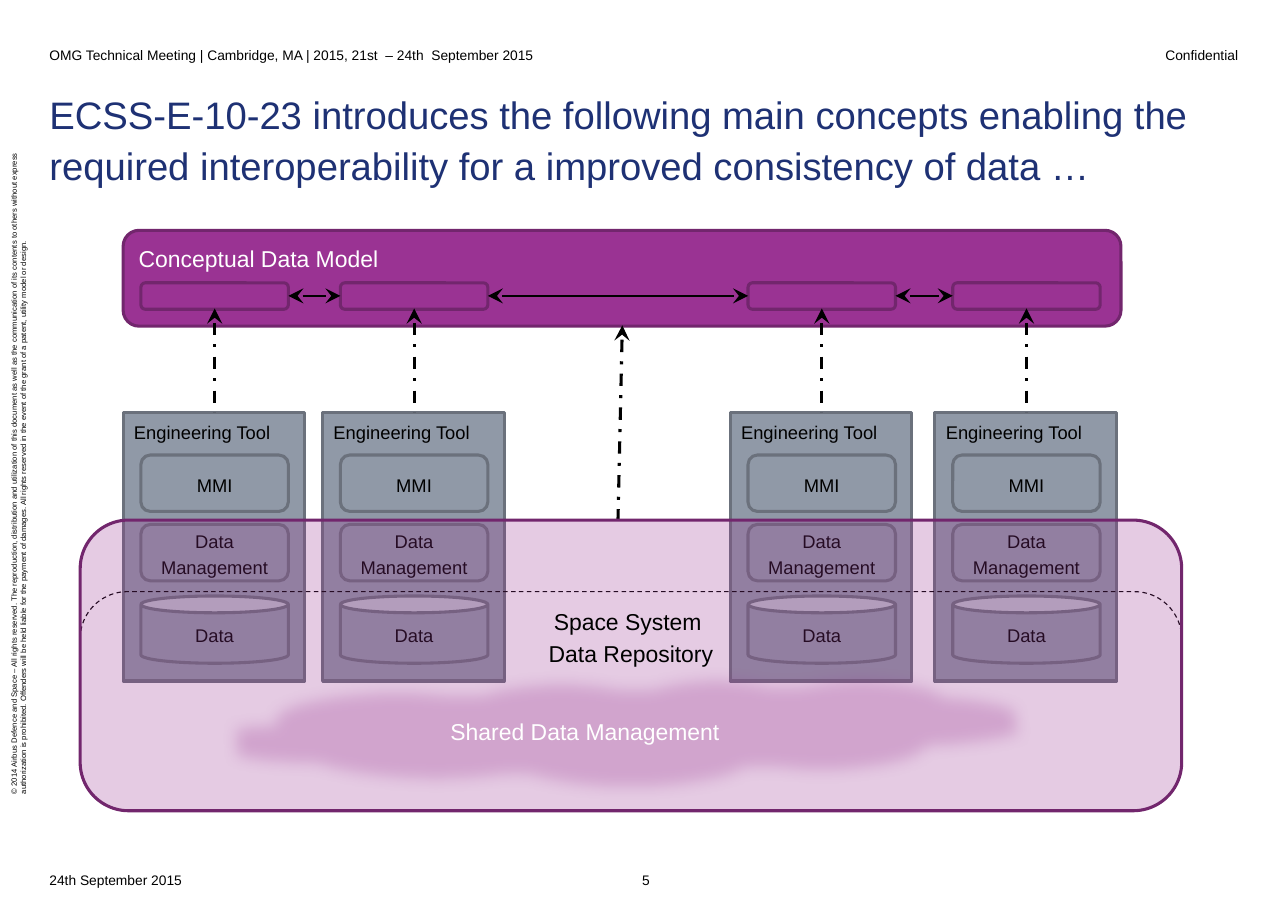
import pptx
import pptx.util
import pptx.dml.color
import pptx.enum.dml
import pptx.enum.shapes
import pptx.enum.text
import pptx.oxml.ns
from lxml import etree

Cm, Pt = pptx.util.Cm, pptx.util.Pt
RGB = pptx.dml.color.RGBColor
KIND = pptx.enum.shapes.MSO_SHAPE
DASH = pptx.enum.dml.MSO_LINE
ALIGN = pptx.enum.text.PP_ALIGN
ANCHOR = pptx.enum.text.MSO_ANCHOR
qn = pptx.oxml.ns.qn

BLACK = RGB(0x00, 0x00, 0x00)
WHITE = RGB(0xFF, 0xFF, 0xFF)
NAVY = RGB(0x1E, 0x31, 0x74)
GREY = RGB(0x90, 0x99, 0xA7)
SLATE = RGB(0x6B, 0x71, 0x7C)
PURPLE = RGB(0x9A, 0x33, 0x93)
PLUM = RGB(0x72, 0x26, 0x6D)

TOOLS = [2.84, 7.44, 16.84, 21.56]
TOP = 9.5
INDENT, INNER = 0.41, 3.4
PARTS = [
    (KIND.CAN, 13.74, 1.55, "Data"),
    (KIND.ROUNDED_RECTANGLE, 12.09, 1.3, "Data Management"),
    (KIND.ROUNDED_RECTANGLE, 10.49, 1.3, "MMI"),
]


def write(frame, text, size=12, color=BLACK, align=ALIGN.LEFT, anchor=ANCHOR.TOP,
          space=1.15, font="Arial"):
    frame.word_wrap = True
    frame.vertical_anchor = anchor
    frame.text = text
    for par in frame.paragraphs:
        par.alignment = align
        par.line_spacing = space
        par.font.name = font
        par.font.size = Pt(size)
        par.font.color.rgb = color


class Art:
    """Draws on one slide; lengths are in centimetres."""

    def __init__(self, slide):
        self.slide = slide
        self.home = slide.shapes

    def group(self):
        """Send the next shapes into a new group."""
        self.home = self.slide.shapes.add_group_shape().shapes

    def close(self):
        """Send the next shapes to the slide again."""
        self.home = self.slide.shapes

    def label(self, text, x, y, w, h, turn=0, space=1, **style):
        box = self.home.add_textbox(Cm(x), Cm(y), Cm(w), Cm(h))
        box.rotation = turn
        frame = box.text_frame
        frame.margin_left = frame.margin_right = 0
        frame.margin_top = frame.margin_bottom = 0
        write(frame, text, space=space, **style)

    def shape(self, kind, x, y, w, h, fill=None, edge=None, width=2, alpha=None):
        item = self.home.add_shape(kind, Cm(x), Cm(y), Cm(w), Cm(h))
        item.shadow.inherit = False
        if fill is None:
            item.fill.background()
        else:
            item.fill.solid()
            item.fill.fore_color.rgb = fill
        if alpha:
            tint = item.element.spPr.find(qn("a:solidFill")).find(qn("a:srgbClr"))
            etree.SubElement(tint, qn("a:alpha"), val=str(alpha * 1000))
        if edge is None:
            item.line.fill.background()
        else:
            item.line.color.rgb = edge
            item.line.width = Pt(width)
        return item

    def arrow(self, x1, y1, x2, y2, width=1, dash=None, ends=("headEnd", "tailEnd")):
        link = self.home.add_connector(
            pptx.enum.shapes.MSO_CONNECTOR.STRAIGHT, Cm(x1), Cm(y1), Cm(x2), Cm(y2))
        link.line.color.rgb = BLACK
        link.line.width = Pt(width)
        if dash:
            link.line.dash_style = dash
        props = link.element.spPr
        for end in ends:
            etree.SubElement(props.find(qn("a:ln")), qn("a:" + end),
                             type="stealth", w="lg", len="lg")
        etree.SubElement(props, qn("a:effectLst"))

    def rise(self, x1, y1, x2, y2):
        """Dash-dot arrow that points at its first end."""
        self.arrow(x1, y1, x2, y2, 2, DASH.DASH_DOT, ["headEnd"])

    def tool(self, x):
        self.group()
        case = self.shape(KIND.RECTANGLE, x, TOP, 4.19, 6.2, GREY, SLATE)
        write(case.text_frame, "Engineering Tool")
        for kind, y, h, text in PARTS:
            part = self.shape(kind, x + INDENT, y, INNER, h, GREY, SLATE)
            write(part.text_frame, text, align=ALIGN.CENTER, anchor=ANCHOR.MIDDLE)
        self.close()


def frame_texts(art):
    """Title, header, footer and the notice at the left edge."""
    small = dict(size=9, anchor=ANCHOR.BOTTOM)
    art.label("Confidential", 24.26, 0.71, 4.29, 0.76, align=ALIGN.RIGHT, **small)
    art.label(
        "© 2014 Airbus Defence and Space – All rights reserved. The reproduction, "
        "distribution and utilization of this document as well as the communication of "
        "its contents to others without express authorization is prohibited. Offenders "
        "will be held liable for the payment of damages. All rights reserved in the "
        "event of the grant of a patent, utility model or design.",
        -7.47, 10.19, 15.8, 0.43, turn=270, size=5)
    art.label(
        "ECSS-E-10-23 introduces the following main concepts enabling the required "
        "interoperability for a improved consistency of data …",
        1.14, 2.01, 27.41, 2.69, size=25, color=NAVY, space=1.1)
    art.label("24th September 2015", 1.14, 19.81, 11.3, 0.66, **small)
    art.label("OMG Technical Meeting | Cambridge, MA | 2015, 21st  – 24th  September 2015",
              1.14, 0.71, 23.01, 0.76, **small)
    art.label("5", 13.64, 19.81, 2.51, 0.66, align=ALIGN.CENTER, **small)


def model(art):
    """Conceptual model, the tools under it and their arrows."""
    bar = art.shape(KIND.ROUNDED_RECTANGLE, 2.84, 5.31, 23.01, 2.21, PURPLE, PLUM)
    write(bar.text_frame, "Conceptual Data Model", size=15, color=WHITE)
    for x in TOOLS:
        art.tool(x)
        left = x + INDENT
        art.shape(KIND.ROUNDED_RECTANGLE, left, 6.52, INNER, 0.61, PURPLE, PLUM)
        art.rise(left + INNER / 2, 7.11, left + INNER / 2, TOP)
    for x, after in zip(TOOLS, TOOLS[1:]):
        art.arrow(x + INDENT + INNER, 6.82, after + INDENT, 6.82)
    art.rise(14.35, 7.5, 14.25, 11.99)


def store(art):
    """Repository and the shared cloud, laid over the tools."""
    rim = art.shape(KIND.ROUNDED_RECTANGLE, 1.85, 13.64, 25.4, 5.05, edge=BLACK, width=0.75)
    rim.adjustments[0] = 0.215
    rim.line.dash_style = DASH.DASH

    body = art.shape(KIND.ROUNDED_RECTANGLE, 1.85, 11.99, 25.4, 6.7, PURPLE, PLUM, alpha=25)
    body.text_frame.margin_top = Cm(1.6)
    write(body.text_frame, "Space System \vData Repository", size=15, align=ALIGN.CENTER)

    cloud = art.shape(KIND.CLOUD, 4.22, 15.34, 20.12, 3.1, PURPLE, alpha=25)
    etree.SubElement(cloud.element.spPr.find(qn("a:effectLst")), qn("a:softEdge"),
                     rad=str(Pt(10)))
    write(cloud.text_frame, "Shared Data Management ", size=15, color=WHITE,
          align=ALIGN.CENTER, anchor=ANCHOR.MIDDLE)


def main():
    deck = pptx.Presentation()
    deck.slide_width, deck.slide_height = Cm(29.7), Cm(21)
    art = Art(deck.slides.add_slide(deck.slide_layouts[6]))
    frame_texts(art)
    model(art)
    store(art)
    deck.save("out.pptx")


if __name__ == "__main__":
    main()
